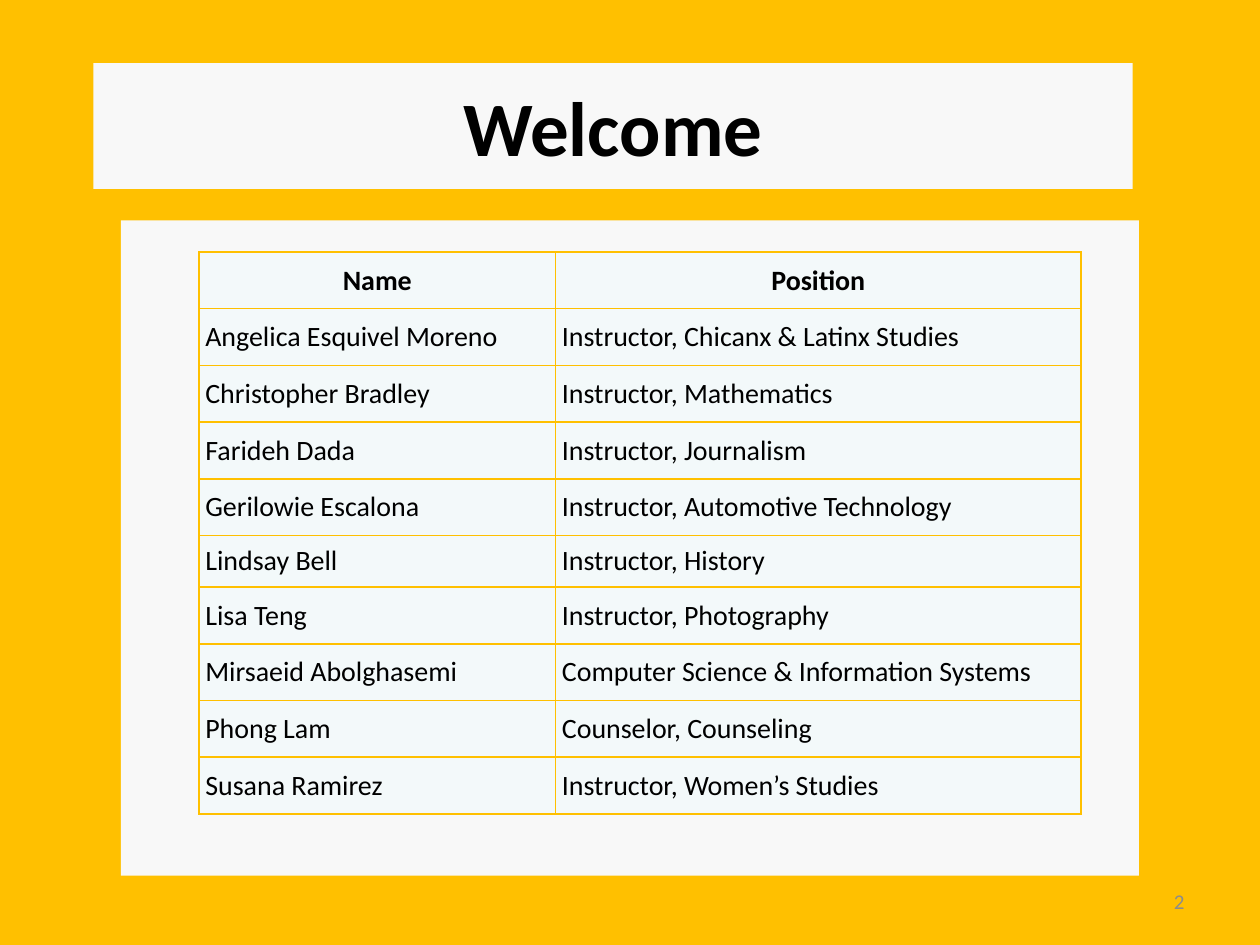
from dataclasses import dataclass

from lxml import etree
from pptx import Presentation
from pptx.dml.color import RGBColor
from pptx.enum.shapes import MSO_SHAPE
from pptx.enum.text import MSO_ANCHOR, PP_ALIGN
from pptx.oxml.ns import qn
from pptx.util import Inches, Pt

RECTANGLE = MSO_SHAPE.RECTANGLE
MIDDLE = MSO_ANCHOR.MIDDLE
LEFT, CENTER, RIGHT = PP_ALIGN.LEFT, PP_ALIGN.CENTER, PP_ALIGN.RIGHT
TITLE_ONLY = 5


@dataclass(frozen=True)
class Theme:
    font: str = "Calibri"
    gold: str = "FFC000"
    panel: str = "F8F8F8"
    cell: str = "F3F9FA"
    ink: str = "000000"
    muted: str = "8C8C8C"
    title_size: int = 44
    table_size: int = 16
    number_size: int = 12


THEME = Theme()

STAFF = [
    ("Name", "Position"),
    ("Angelica Esquivel Moreno", "Instructor, Chicanx & Latinx Studies"),
    ("Christopher Bradley", "Instructor, Mathematics"),
    ("Farideh Dada", "Instructor, Journalism"),
    ("Gerilowie Escalona", "Instructor, Automotive Technology"),
    ("Lindsay Bell", "Instructor, History"),
    ("Lisa Teng", "Instructor, Photography"),
    ("Mirsaeid Abolghasemi", "Computer Science & Information Systems"),
    ("Phong Lam", "Counselor, Counseling"),
    ("Susana Ramirez", "Instructor, Women’s Studies"),
]
COLUMN_WIDTHS = (2.83, 4.17)
ROW_HEIGHT = 0.45
SHORT_ROW, SHORT_HEIGHT = 5, 0.41


def paint(target, color):
    target.fill.solid()
    target.fill.fore_color.rgb = RGBColor.from_string(color)


def write(frame, text, size, color, align, bold=False):
    frame.text = text
    para = frame.paragraphs[0]
    para.alignment = align
    font = para.font
    font.name, font.size, font.bold = THEME.font, Pt(size), bold
    font.color.rgb = RGBColor.from_string(color)


def add_title(page, text):
    title = page.shapes.title
    title.left, title.top = Inches(0.74), Inches(0.5)
    title.width, title.height = Inches(8.25), Inches(1)
    paint(title, THEME.panel)
    title.text_frame.vertical_anchor = MIDDLE
    write(title.text_frame, text, THEME.title_size, THEME.ink, CENTER, bold=True)


def add_panel(page):
    panel = page.shapes.add_shape(
        RECTANGLE, Inches(0.96), Inches(1.75), Inches(8.08), Inches(5.2))
    panel.shadow.inherit = False
    paint(panel, THEME.panel)
    panel.line.fill.background()


def add_page_number(page, text):
    box = page.shapes.add_textbox(
        Inches(7.17), Inches(6.95), Inches(2.33), Inches(0.4))
    box.text_frame.word_wrap = True
    box.text_frame.vertical_anchor = MIDDLE
    write(box.text_frame, text, THEME.number_size, THEME.muted, RIGHT)


def add_borders(cell):
    properties = cell._tc.get_or_add_tcPr()
    # Border lines must come before the cell fill
    for position, side in enumerate(("lnL", "lnR", "lnT", "lnB")):
        line = etree.Element(qn(f"a:{side}"), w=str(Pt(1)))
        fill = etree.SubElement(line, qn("a:solidFill"))
        etree.SubElement(fill, qn("a:srgbClr"), val=THEME.gold)
        properties.insert(position, line)


def format_cell(cell, text, is_header):
    margin = Inches(0.01 if is_header else 0.05)
    cell.margin_left = cell.margin_right = cell.margin_top = margin
    cell.margin_bottom = 0 if is_header else margin
    cell.vertical_anchor = MIDDLE
    write(cell.text_frame, text, THEME.table_size, THEME.ink,
          CENTER if is_header else LEFT, bold=is_header)
    paint(cell, THEME.cell)
    add_borders(cell)


def add_staff_table(page):
    heights = [SHORT_HEIGHT if index == SHORT_ROW else ROW_HEIGHT
               for index in range(len(STAFF))]
    table = page.shapes.add_table(
        len(STAFF), len(COLUMN_WIDTHS), Inches(1.58), Inches(2),
        Inches(sum(COLUMN_WIDTHS)), Inches(sum(heights))).table
    table.horz_banding = False
    for column, width in zip(table.columns, COLUMN_WIDTHS):
        column.width = Inches(width)
    for index, (row, height) in enumerate(zip(table.rows, heights)):
        row.height = Inches(height)
        for cell, text in zip(row.cells, STAFF[index]):
            format_cell(cell, text, is_header=index == 0)


def main():
    deck = Presentation()
    deck.slide_width, deck.slide_height = Inches(10), Inches(7.5)
    page = deck.slides.add_slide(deck.slide_layouts[TITLE_ONLY])
    paint(page.background, THEME.gold)

    # Heading and backdrop
    add_page_number(page, "2")
    add_panel(page)
    add_title(page, "Welcome")

    # Staff list
    add_staff_table(page)
    deck.save("out.pptx")


if __name__ == "__main__":
    main()
